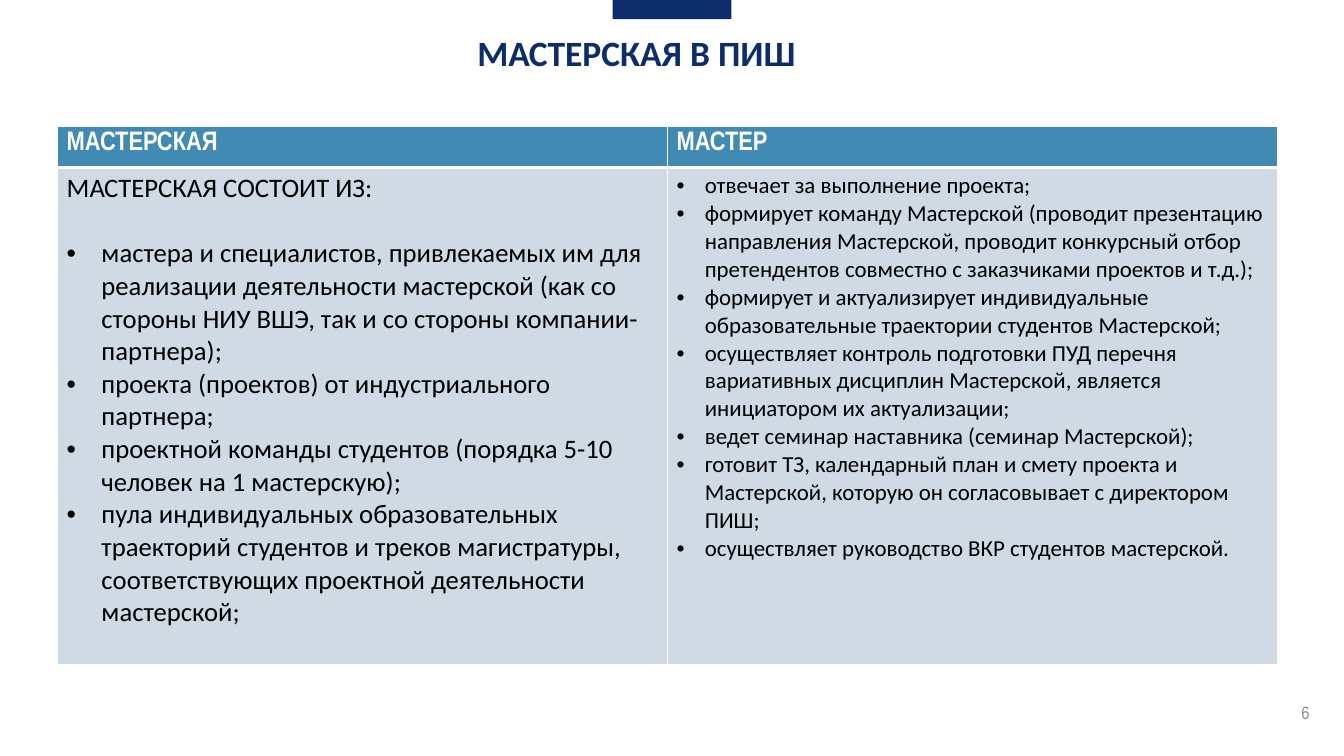
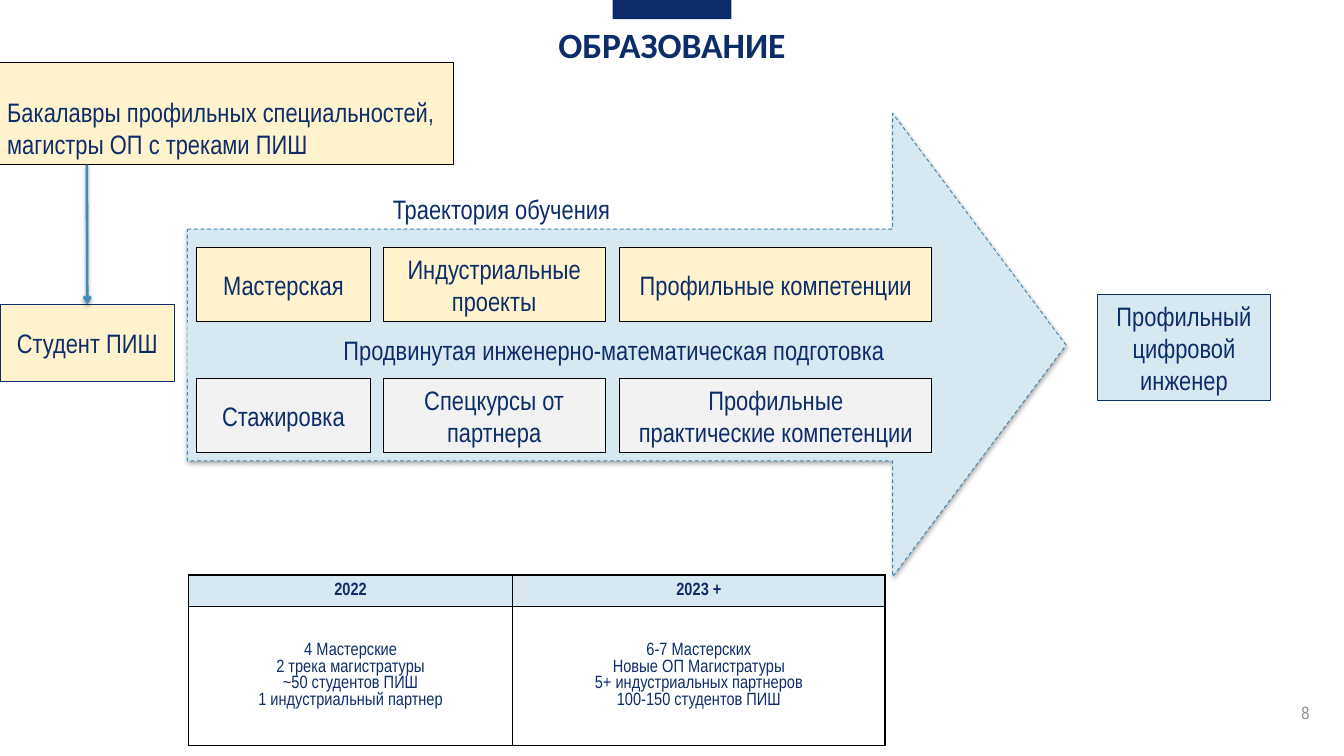
from lxml.etree import SubElement
from pptx import Presentation
from pptx.dml.color import RGBColor
from pptx.enum.dml import MSO_LINE as Dash
from pptx.enum.shapes import MSO_CONNECTOR as Link, MSO_SHAPE as Form
from pptx.enum.text import MSO_ANCHOR as Anchor, PP_ALIGN as Align
from pptx.oxml.ns import qn
from pptx.util import Pt

PX = 9144
HUE = {name: RGBColor.from_string(code) for name, code in {
    "navy": "0C2D69", "blue": "418AB3", "edge": "3D88B2", "pale": "D8E8F1",
    "mist": "CFDAE5", "cream": "FFF3CD", "grey": "F2F2F2", "dim": "8C8C8C",
    "white": "FFFFFF", "black": "000000"}.items()}
SANS, SLIM = "Calibri", "Arial Narrow"


def write(frame, lines, size=21, face=SLIM, hue="navy", bold=False,
          align=Align.CENTER, anchor=Anchor.MIDDLE, dent=0):
    frame.word_wrap = True
    frame.vertical_anchor = anchor
    for i, line in enumerate(lines):
        para = frame.add_paragraph() if i else frame.paragraphs[0]
        if line.startswith("•"):
            props = para._p.get_or_add_pPr()
            props.set("marL", str(dent * PX))
            props.set("indent", str(-dent * PX))
            SubElement(props, qn("a:buFont"), typeface="Arial")
            SubElement(props, qn("a:buChar"), char="•")
        para.text = line.lstrip("•")
        para.alignment = align
        font = para.font
        font.size, font.name, font.bold = Pt(size), face, bold
        font.color.rgb = HUE[hue]


def box(slide, spot, fill=None, edge=None, lines=(), form=Form.RECTANGLE, **style):
    spot = [n * PX for n in spot]
    if fill:
        shape = slide.shapes.add_shape(form, *spot)
        shape.shadow.inherit = False
        shape.fill.solid()
        shape.fill.fore_color.rgb = HUE[fill]
        if edge:
            shape.line.color.rgb = HUE[edge]
            shape.line.width = Pt(0.75)
        else:
            shape.line.fill.background()
    else:
        shape = slide.shapes.add_textbox(*spot)
    if lines:
        write(shape.text_frame, lines, **style)
    return shape


deck = Presentation()
deck.slide_width, deck.slide_height = 1470 * PX, 827 * PX

pages = []
for title, spot, num in [("МАСТЕРСКАЯ В ПИШ", (-39, 20, 1470, 74), "6"),
                         ("ОБРАЗОВАНИЕ", (0, 21, 1470, 55), "8")]:
    page = deck.slides.add_slide(deck.slide_layouts[6])
    box(page, (1372, 757, 70, 44), lines=[num], size=14, hue="dim", align=Align.RIGHT)
    box(page, (670, 0, 130, 21), "navy")
    head = box(page, spot, lines=[title], size=28, face=SANS, bold=True).text_frame
    head.margin_left = head.margin_right = head.margin_top = head.margin_bottom = 0
    pages.append(page)
shop, study = pages

arrow = box(study, (205, 124, 961, 507), "pale", "edge", form=Form.RIGHT_ARROW)
arrow.adjustments[0], arrow.adjustments[1] = 0.5, 0.374
arrow.line.dash_style = Dash.DASH

box(study, (1200, 322, 190, 116), "pale", "navy", ["Профильный цифровой инженер"])
box(study, (205, 352, 933, 61), "pale",
    lines=["Продвинутая инженерно-математическая подготовка"])
box(study, (412, 173, 273, 111), lines=["Траектория обучения"])
box(study, (-2, 68, 498, 112), "cream", "black",
    ["Бакалавры профильных специальностей, магистры ОП с треками ПИШ"],
    align=Align.LEFT, anchor=Anchor.BOTTOM)
pupil = box(study, (0, 333, 191, 84), "cream", "navy", ["Студент ПИШ"])

for top, fill, names in [
        (271, "cream", ["Мастерская", "Индустриальные проекты", "Профильные компетенции"]),
        (414, "grey", ["Стажировка", "Спецкурсы от партнера",
                       "Профильные\nпрактические компетенции"])]:
    for (left, wide), name in zip([(215, 190), (419, 243), (678, 341)], names):
        box(study, (left, top, wide, 81), fill, "black", [name])

link = study.shapes.add_connector(Link.STRAIGHT, 95 * PX, 180 * PX, 95 * PX, 333 * PX)
link.end_connect(pupil, 0)
link.line.color.rgb = HUE["blue"]
link.line.width = Pt(2)
SubElement(link.line._ln, qn("a:tailEnd"), type="arrow")
SubElement(link._element.spPr, qn("a:effectLst"))

for item, dist, alpha in [(arrow, 1.8, 35), (link, 1.6, 38)]:
    glow = SubElement(item._element.spPr.find(qn("a:effectLst")), qn("a:outerShdw"),
                      blurRad=str(Pt(3.1)), dist=str(Pt(dist)), dir="5400000",
                      rotWithShape="0")
    tint = SubElement(glow, qn("a:srgbClr"), val=str(HUE["black"]))
    SubElement(tint, qn("a:alpha"), val=str(alpha * 1000))

team = [
    "МАСТЕРСКАЯ СОСТОИТ ИЗ:",
    "•мастера и специалистов, привлекаемых им для реализации деятельности мастерской "
    "(как со стороны НИУ ВШЭ, так и со стороны компании-партнера);",
    "•проекта (проектов) от индустриального партнера;",
    "•проектной команды студентов (порядка 5-10 человек на 1 мастерскую);",
    "•пула индивидуальных образовательных траекторий студентов и треков магистратуры, "
    "соответствующих проектной деятельности мастерской;"]
tasks = [
    "•отвечает за выполнение проекта;",
    "•формирует команду Мастерской (проводит презентацию направления Мастерской, "
    "проводит конкурсный отбор претендентов совместно с заказчиками проектов и т.д.);",
    "•формирует и актуализирует индивидуальные образовательные траектории студентов "
    "Мастерской;",
    "•осуществляет контроль подготовки ПУД перечня вариативных дисциплин Мастерской, "
    "является инициатором их актуализации;",
    "•ведет семинар наставника (семинар Мастерской);",
    "•готовит ТЗ, календарный план и смету проекта и Мастерской, которую он "
    "согласовывает с директором ПИШ;",
    "•осуществляет руководство ВКР студентов мастерской."]
start = ["4 Мастерские", "2 трека магистратуры", "~50 студентов ПИШ",
         "1 индустриальный партнер"]
later = ["6-7 Мастерских", "Новые ОП Магистратуры", "5+ индустриальных партнеров",
         "100-150 студентов ПИШ"]

left = {"align": Align.LEFT, "anchor": Anchor.TOP}
top = {**left, "hue": "white", "bold": True}
body = {**left, "face": SANS, "hue": "black"}
small = {"size": 14}
grids = []
for page, x, y, cols, rows, fills, edge, mid, cells in [
        (shop, 63, 138, [667, 667], [41, 544], ["blue", "mist"], "white", 3,
         [[(["МАСТЕРСКАЯ"], top), (["МАСТЕР"], top)],
          [(team, {**body, "dent": 38}), (tasks, {**body, "size": 18, "dent": 31})]]),
        (study, 206, 629, [355, 407], [34, 153], ["pale", "white"], "black", 1,
         [[(["2022"], {**small, "bold": True}), (["2023 +"], {**small, "bold": True})],
          [(start, small), (later, small)]])]:
    grid = page.shapes.add_table(len(rows), len(cols), x * PX, y * PX,
                                 sum(cols) * PX, sum(rows) * PX).table
    for c, wide in enumerate(cols):
        grid.columns[c].width = wide * PX
    for r, high in enumerate(rows):
        grid.rows[r].height = high * PX
        for c, (lines, style) in enumerate(cells[r]):
            cell = grid.cell(r, c)
            write(cell.text_frame, lines, **style)
            cell.vertical_anchor = style.get("anchor", Anchor.MIDDLE)
            props = cell._tc.get_or_add_tcPr()
            for side in "LRTB":
                thick = mid if (r, side) in [(0, "B"), (1, "T")] else 1
                line = SubElement(props, qn("a:ln" + side), w=str(Pt(thick)))
                paint = SubElement(line, qn("a:solidFill"))
                SubElement(paint, qn("a:srgbClr"), val=str(HUE[edge]))
            cell.fill.solid()
            cell.fill.fore_color.rgb = HUE[fills[r]]
    grids.append(grid)
grids[0].cell(1, 0).text_frame.paragraphs[0].space_after = Pt(26)

deck.save("out.pptx")
